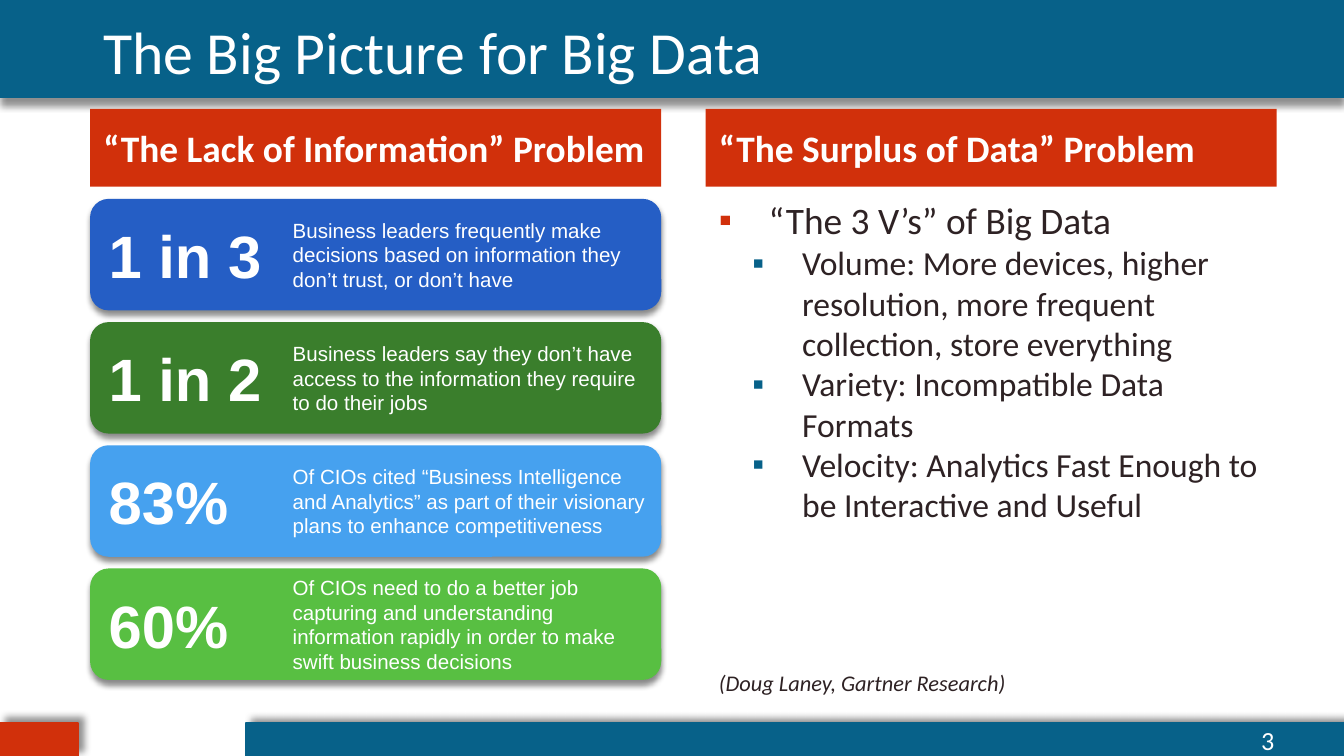
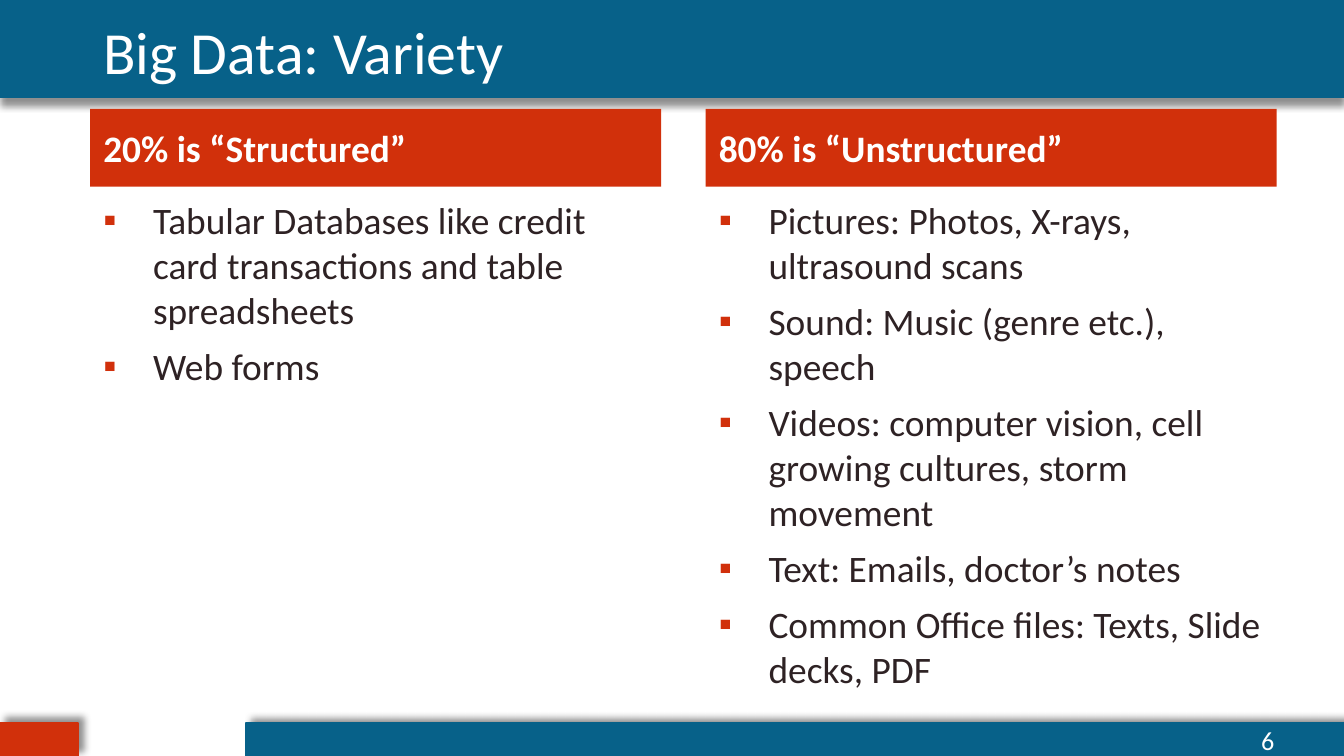
from dataclasses import dataclass

from lxml import etree
from pptx import Presentation
from pptx.dml.color import RGBColor
from pptx.enum.shapes import MSO_SHAPE
from pptx.enum.text import MSO_ANCHOR, PP_ALIGN
from pptx.oxml.ns import qn
from pptx.util import Inches, Pt

RECTANGLE = MSO_SHAPE.RECTANGLE
ROUNDED = MSO_SHAPE.ROUNDED_RECTANGLE
TOP, MIDDLE, BOTTOM = MSO_ANCHOR.TOP, MSO_ANCHOR.MIDDLE, MSO_ANCHOR.BOTTOM
LEFT, RIGHT = PP_ALIGN.LEFT, PP_ALIGN.RIGHT


@dataclass(frozen=True)
class Theme:
    blue: str = "076189"
    red: str = "D1300B"
    ink: str = "2E2224"
    white: str = "FFFFFF"
    font: str = "Calibri"
    card_font: str = "Arial"
    title: int = 32
    heading: int = 20
    bullet_sizes: tuple = (20, 18)
    statistic: int = 32
    detail: int = 11
    source: int = 12
    number: int = 14


THEME = Theme()

SLIDE_WIDTH, SLIDE_HEIGHT = 10, 5.625
COLUMN_LEFTS = (0.67, 5.25)
COLUMN_WIDTH = 4.25
FOOTER_TOP, FOOTER_HEIGHT = 5.38, 0.25
CARDS_TOP, CARDS_BOTTOM, CARD_HEIGHT = 1.48, 5.06, 0.83
DETAIL_OFFSET = 1.41
HANGING, LEVEL_STEP = 0.37, 0.25

BAND_SHADOW = {"opacity": 43, "blur": 4, "distance": 4, "angle": 90}
FOOTER_SHADOW = {**BAND_SHADOW, "angle": 315}
CARD_SHADOW = {"opacity": 45, "blur": 3, "distance": 2.4, "angle": 90}

STATISTICS = [
    ("1 in 3", "255EC5", "Business leaders frequently make decisions based on "
     "information they don’t trust, or don’t have"),
    ("1 in 2", "3A7E2C", "Business leaders say they don’t have access to the "
     "information they require to do their jobs"),
    ("83%", "46A1EF", "Of CIOs cited “Business Intelligence and Analytics” as part of "
     "their visionary plans to enhance competitiveness"),
    ("60%", "58BF42", "Of CIOs need to do a better job capturing and understanding "
     "information rapidly in order to make swift business decisions"),
]
THREE_VS = [
    (0, "“The 3 V’s” of Big Data"),
    (1, "Volume: More devices, higher resolution, more frequent collection, "
     "store everything"),
    (1, "Variety: Incompatible Data Formats"),
    (1, "Velocity: Analytics Fast Enough to be Interactive and Useful"),
]
STRUCTURED = [
    (0, "Tabular Databases like credit card transactions and table spreadsheets"),
    (0, "Web forms"),
]
UNSTRUCTURED = [
    (0, "Pictures: Photos, X-rays, ultrasound scans"),
    (0, "Sound: Music (genre etc.), speech"),
    (0, "Videos: computer vision, cell growing cultures, storm movement"),
    (0, "Text: Emails, doctor’s notes"),
    (0, "Common Office files: Texts, Slide decks, PDF"),
]


def apply_format(target, values):
    for name, value in values.items():
        setattr(target, name, value)


def add_run(paragraph, text, size, color, name=THEME.font, bold=False, italic=False):
    run = paragraph.add_run()
    run.text = text
    apply_format(run.font, {"name": name, "size": Pt(size), "bold": bold, "italic": italic})
    run.font.color.rgb = RGBColor.from_string(color)


def prepare_frame(shape, anchor=TOP, vertical_margin=0.05):
    frame = shape.text_frame
    margin = Inches(vertical_margin)
    apply_format(frame, {"word_wrap": True, "vertical_anchor": anchor,
                         "margin_left": Inches(0.1), "margin_right": Inches(0.1),
                         "margin_top": margin, "margin_bottom": margin})
    return frame


def write_line(shape, text, size, color, anchor=TOP, alignment=LEFT,
               vertical_margin=0.05, **font):
    paragraph = prepare_frame(shape, anchor, vertical_margin).paragraphs[0]
    paragraph.alignment = alignment
    add_run(paragraph, text, size, color, **font)


def add_box(slide, left, top, width, height):
    return slide.shapes.add_textbox(*map(Inches, (left, top, width, height)))


def add_shadow(shape, opacity, blur, distance, angle):
    effects = shape._element.spPr.find(qn("a:effectLst"))
    shadow = etree.SubElement(effects, qn("a:outerShdw"), blurRad=str(Pt(blur)),
                              dist=str(Pt(distance)), dir=str(angle * 60000),
                              algn="ctr", rotWithShape="0")
    color = etree.SubElement(shadow, qn("a:srgbClr"), val="000000")
    etree.SubElement(color, qn("a:alpha"), val=str(opacity * 1000))


def add_panel(slide, left, top, width, height, color, kind=RECTANGLE,
              shadow=None, outlined=False):
    shape = slide.shapes.add_shape(kind, *map(Inches, (left, top, width, height)))
    shape.fill.solid()
    shape.fill.fore_color.rgb = RGBColor.from_string(color)
    if outlined:
        shape.line.color.rgb = RGBColor.from_string(color)
        shape.line.width = Pt(0.75)
    else:
        shape.line.fill.background()
    shape.shadow.inherit = False
    if shadow:
        add_shadow(shape, **shadow)
    return shape


def add_frame(presentation, title, number):
    slide = presentation.slides.add_slide(presentation.slide_layouts[6])
    add_panel(slide, 0, 0, SLIDE_WIDTH, 0.73, THEME.blue, shadow=BAND_SHADOW)
    for left, width, color in ((0, 0.58, THEME.red), (1.83, 8.17, THEME.blue)):
        add_panel(slide, left, FOOTER_TOP, width, FOOTER_HEIGHT, color,
                  shadow=FOOTER_SHADOW, outlined=True)
    write_line(add_box(slide, COLUMN_LEFTS[0], 0.06, 8.92, 0.58), title,
               THEME.title, THEME.white, BOTTOM, vertical_margin=0)
    write_line(add_box(slide, 9, FOOTER_TOP, 0.58, FOOTER_HEIGHT), number,
               THEME.number, THEME.white, MIDDLE, RIGHT, vertical_margin=0)
    return slide


def add_headings(slide, headings):
    for left, heading in zip(COLUMN_LEFTS, headings):
        panel = add_panel(slide, left, 0.81, COLUMN_WIDTH, 0.58, THEME.red)
        write_line(panel, heading, THEME.heading, THEME.white, MIDDLE, bold=True)


def set_bullet(paragraph, level):
    properties = paragraph._p.get_or_add_pPr()
    properties.set("marL", str(Inches(HANGING + level * LEVEL_STEP)))
    properties.set("indent", str(-Inches(HANGING)))
    color = etree.SubElement(properties, qn("a:buClr"))
    etree.SubElement(color, qn("a:srgbClr"), val=(THEME.red, THEME.blue)[level])
    etree.SubElement(properties, qn("a:buFont"), typeface=THEME.card_font)
    etree.SubElement(properties, qn("a:buChar"), char="▪")


def add_bullets(slide, left, items):
    frame = prepare_frame(add_box(slide, left, 1.42, COLUMN_WIDTH, 3.89))
    for index, (level, text) in enumerate(items):
        paragraph = frame.add_paragraph() if index else frame.paragraphs[0]
        set_bullet(paragraph, level)
        paragraph.level = level
        paragraph.space_before = Pt(6 if index and level == 0 else 0)
        add_run(paragraph, text, THEME.bullet_sizes[level], THEME.ink)


def add_cards(slide, left, statistics):
    step = (CARDS_BOTTOM - CARD_HEIGHT - CARDS_TOP) / (len(statistics) - 1)
    for index, (figure, color, detail) in enumerate(statistics):
        top = CARDS_TOP + index * step
        card = add_panel(slide, left, top, COLUMN_WIDTH, CARD_HEIGHT, color,
                         ROUNDED, CARD_SHADOW)
        write_line(card, figure, THEME.statistic, THEME.white, MIDDLE,
                   name=THEME.card_font, bold=True)
        box = add_box(slide, left + DETAIL_OFFSET, top,
                      COLUMN_WIDTH - DETAIL_OFFSET, CARD_HEIGHT)
        write_line(box, detail, THEME.detail, THEME.white, MIDDLE, name=THEME.card_font)


def build_big_picture(presentation):
    slide = add_frame(presentation, "The Big Picture for Big Data", "3")
    add_headings(slide, ("“The Lack of Information” Problem",
                         "“The Surplus of Data” Problem"))
    add_cards(slide, COLUMN_LEFTS[0], STATISTICS)
    add_bullets(slide, COLUMN_LEFTS[1], THREE_VS)
    write_line(add_box(slide, COLUMN_LEFTS[1], 4.93, COLUMN_WIDTH, 0.3),
               "(Doug Laney, Gartner Research)", THEME.source, THEME.ink, italic=True)


def build_variety(presentation):
    slide = add_frame(presentation, "Big Data: Variety", "6")
    add_headings(slide, ("20% is “Structured”", "80% is “Unstructured”"))
    for left, items in zip(COLUMN_LEFTS, (STRUCTURED, UNSTRUCTURED)):
        add_bullets(slide, left, items)


def main():
    presentation = Presentation()
    presentation.slide_width = Inches(SLIDE_WIDTH)
    presentation.slide_height = Inches(SLIDE_HEIGHT)
    build_big_picture(presentation)
    build_variety(presentation)
    presentation.save("out.pptx")


if __name__ == "__main__":
    main()
